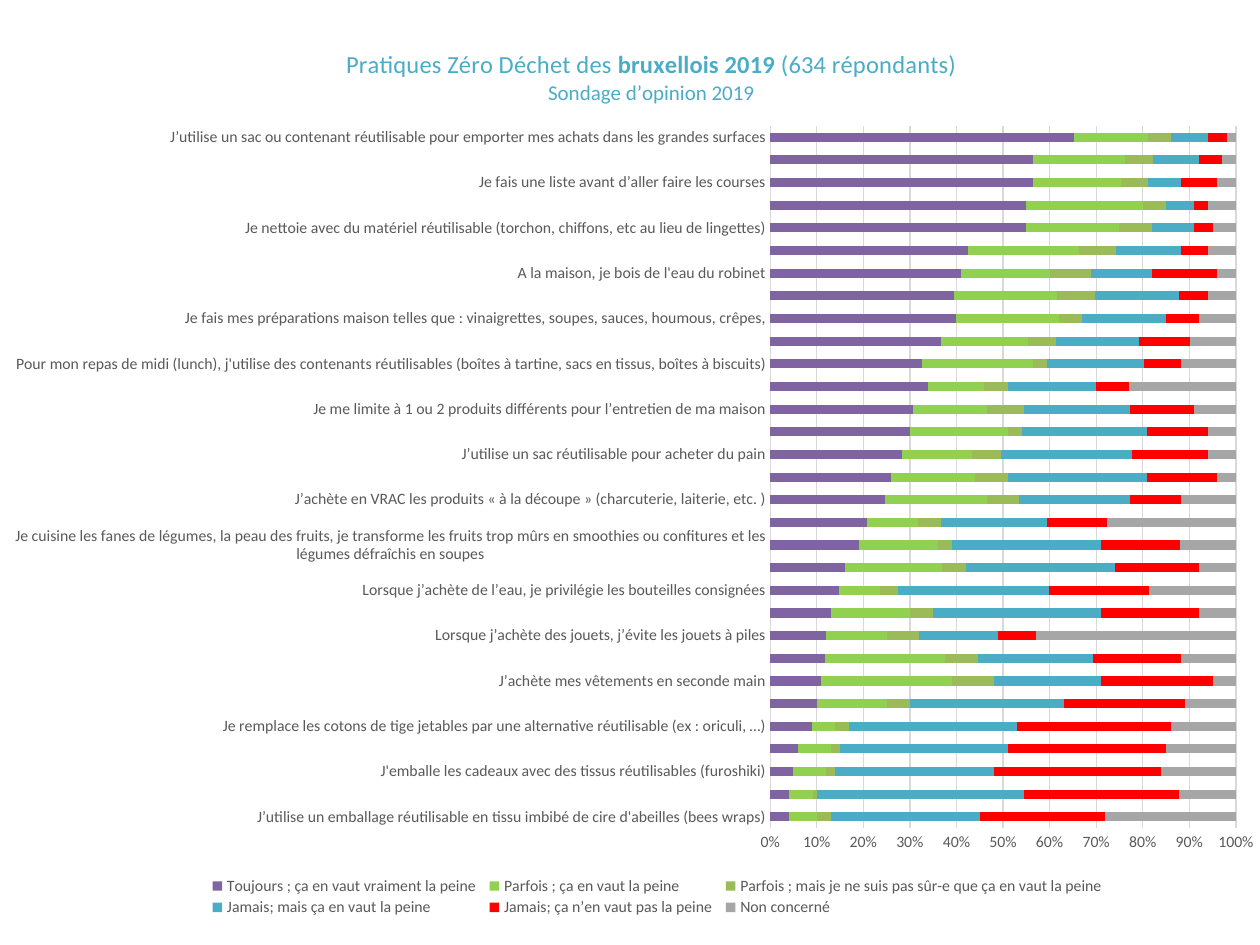
from pptx import Presentation
from pptx.chart.data import CategoryChartData
from pptx.dml.color import RGBColor
from pptx.enum import chart as ch
from pptx.oxml import parse_xml
from pptx.oxml.ns import nsdecls
from pptx.util import Pt

TEAL = RGBColor(0x4B, 0xAC, 0xC6)
PURPLE = RGBColor(0x80, 0x64, 0xA2)
LIME = RGBColor(0x92, 0xD0, 0x50)
OLIVE = RGBColor(0x9B, 0xBB, 0x59)
RED = RGBColor(0xFF, 0x00, 0x00)
SILVER = RGBColor(0xA6, 0xA6, 0xA6)
TEXT = RGBColor(0x59, 0x59, 0x59)
GRID = RGBColor(0xD9, 0xD9, 0xD9)
FONT = "Calibri"

# Content: title lines as (size, runs), runs as (text, bold)
TITLE = [
    (14, [("Pratiques Zéro Déchet des ", False), ("bruxellois 2019", True),
          (" (634 répondants)", False)]),
    (12, [("Sondage d’opinion 2019", False)]),
]

# Habits, from the bottom bar to the top one
HABITS = [
    "J’utilise un emballage réutilisable en tissu imbibé de cire d'abeilles (bees wraps)",
    "Je fabrique certains produits cosmétiques (dentifrice, savon, …)",
    "J'emballe les cadeaux avec des tissus réutilisables (furoshiki)",
    "Je fabrique certains produits d’entretien (maison, lessive, ..)",
    "Je remplace les cotons de tige jetables par une alternative réutilisable (ex : oriculi, …)",
    "J’achète en VRAC les produits liquides (produits d’entretien, etc.)",
    "J’achète mes vêtements en seconde main",
    "Je privilégie les appareils manuels, j’évite les appareils électriques ou "
    "nécessitants des piles",
    "Lorsque j’achète des jouets, j’évite les jouets à piles",
    "Je fais mes préparations maison telles que : biscuits, yaourts, pains, etc.",
    "Lorsque j’achète de l’eau, je privilégie les bouteilles consignées",
    "J’achète en VRAC les produits secs (pâtes, riz, céréales, farine, etc.)",
    "Je cuisine les fanes de légumes, la peau des fruits, je transforme les fruits trop mûrs "
    "en smoothies ou confitures et les légumes défraîchis en soupes",
    "J’évite les dosettes jetables de café en utilisant un percolateur avec un filtre "
    "permanent, dans une cafetière italienne",
    "J’achète en VRAC les produits « à la découpe » (charcuterie, laiterie, etc. )",
    "Je remplace les objets à usages uniques de type essuie-tout, mouchoirs, serviettes en "
    "papier par des objets en tissu",
    "J’utilise un sac réutilisable pour acheter du pain",
    "J’utilise une gourde (bouteilles isothermes, mugs,...) pour mes boissons",
    "Je me limite à 1 ou 2 produits différents pour l’entretien de ma maison",
    "Je me désabonne ou me désinscris des publications que je ne lis plus/pas",
    "Pour mon repas de midi (lunch), j'utilise des contenants réutilisables (boîtes à "
    "tartine, sacs en tissus, boîtes à biscuits)",
    "Pour les fêtes, je remplace les objets en plastique jetables par des alternatives "
    "réutilisables (gobelets, assiettes, couverts)",
    "Je fais mes préparations maison telles que : vinaigrettes, soupes, sauces, houmous, "
    "crêpes,",
    "Je m’organise pour avoir un sac à vrac sur moi en permanence",
    "A la maison, je bois de l'eau du robinet",
    "Je range une fois par semaine le frigo pour éviter d’oublier des aliments",
    "Je nettoie avec du matériel réutilisable (torchon, chiffons, etc au lieu de lingettes)",
    "Je cuisine les repas en tenant compte de ce qui est encore disponible à la maison et "
    "des restes à consommer",
    "Je fais une liste avant d’aller faire les courses",
    "J’utilise un sac ou contenant réutilisable pour emporter mes achats dans les petits "
    "commerces",
    "J’utilise un sac ou contenant réutilisable pour emporter mes achats dans les grandes "
    "surfaces",
]

# Answers: name, colour, share of each habit in percent
ANSWERS = [
    ("Toujours ; ça en vaut vraiment la peine", PURPLE,
     [4, 4, 5, 6, 9, 10, 11, 12, 12, 13, 15, 16, 19, 21, 25, 26, 28, 30, 31, 34, 33, 37,
      40, 39, 41, 43, 55, 55, 57, 57, 66]),
    ("Parfois ; ça en vaut la peine", LIME,
     [6, 5, 7, 7, 5, 15, 28, 26, 13, 17, 9, 21, 17, 11, 22, 18, 15, 21, 16, 12, 24, 19,
      22, 22, 19, 24, 20, 25, 19, 20, 16]),
    ("Parfois ; mais je ne suis pas sûr-e que ça en vaut la peine", OLIVE,
     [3, 1, 2, 2, 3, 5, 9, 7, 7, 5, 4, 5, 3, 5, 7, 7, 6, 3, 8, 5, 3, 6,
      5, 8, 9, 8, 7, 5, 6, 6, 5]),
    ("Jamais; mais ça en vaut la peine", TEAL,
     [32, 44, 34, 36, 36, 33, 23, 25, 17, 36, 33, 32, 32, 23, 24, 30, 28, 27, 23, 19, 21, 18,
      18, 18, 13, 14, 9, 6, 7, 10, 8]),
    ("Jamais; ça n’en vaut pas la peine", RED,
     [27, 33, 36, 34, 33, 26, 24, 19, 8, 21, 22, 18, 17, 13, 11, 15, 16, 13, 14, 7, 8, 11,
      7, 6, 14, 6, 4, 3, 8, 5, 4]),
    ("Non concerné", SILVER,
     [28, 12, 16, 15, 14, 11, 5, 12, 43, 8, 19, 8, 12, 28, 12, 4, 6, 6, 9, 23, 12, 10,
      8, 6, 4, 6, 5, 6, 4, 3, 2]),
]


def style(font, size, color):
    font.name, font.size, font.color.rgb = FONT, Pt(size), color


def layout(x, y, w=None, h=None, inner=False):
    """Place a chart part by fractions of the chart frame."""
    tags = '<c:layoutTarget val="inner"/>' if inner else ""
    tags += '<c:xMode val="edge"/><c:yMode val="edge"/>'
    for tag, val in zip("xywh", (x, y, w, h)):
        if val is not None:
            tags += f'<c:{tag} val="{val}"/>'
    return parse_xml(f'<c:layout {nsdecls("c")}><c:manualLayout>{tags}'
                     '</c:manualLayout></c:layout>')


def place(parent, new, before):
    for old in parent.findall(new.tag):
        parent.remove(old)
    tags = [child.tag.split("}")[1] for child in parent]
    spot = next((i for i, tag in enumerate(tags) if tag in before), len(tags))
    parent.insert(spot, new)


def main():
    prs = Presentation()
    prs.slide_width, prs.slide_height = Pt(720), Pt(540)
    slide = prs.slides.add_slide(prs.slide_layouts[6])

    # Chart
    data = CategoryChartData(number_format="0")
    data.categories = HABITS
    for name, _, vals in ANSWERS:
        data.add_series(name, vals)
    chart = slide.shapes.add_chart(ch.XL_CHART_TYPE.BAR_STACKED_100, Pt(8.6), Pt(9.4),
                                   Pt(719.3), Pt(521.3), data).chart
    style(chart.font, 10, RGBColor(0, 0, 0))
    plot = chart.plots[0]
    plot.gap_width, plot.overlap, plot.vary_by_categories = 150, 100, False
    for ser, (_, color, _) in zip(plot.series, ANSWERS):
        ser.format.fill.solid()
        ser.format.fill.fore_color.rgb = color
    place(chart.plots[0]._element.getparent(),
          layout(0.6, 0.12, 0.37, 0.77, inner=True), ["barChart"])

    # Title
    chart.has_title = True
    frame = chart.chart_title.text_frame
    for i, (size, runs) in enumerate(TITLE):
        para = frame.add_paragraph() if i else frame.paragraphs[0]
        for words, bold in runs:
            run = para.add_run()
            run.text = words
            run.font.bold = bold
            style(run.font, size, TEAL)
    chart.chart_title.include_in_layout = False
    place(chart.chart_title._element, layout(0.26, 0.03), ["overlay", "spPr", "txPr"])

    # Axes
    cat, val = chart.category_axis, chart.value_axis
    for axis in (cat, val):
        axis.major_tick_mark = axis.minor_tick_mark = ch.XL_TICK_MARK.NONE
        style(axis.tick_labels.font, 9, TEXT)
    cat.has_major_gridlines, val.has_major_gridlines = False, True
    for line in (cat.format.line, val.major_gridlines.format.line):
        line.color.rgb, line.width = GRID, Pt(0.75)
    val.format.line.fill.background()
    val.minimum_scale, val.maximum_scale, val.major_unit = 0, 1, 0.1
    val.tick_labels.number_format = "0%"
    val.tick_labels.number_format_is_linked = False
    skip = parse_xml(f'<c:tickLblSkip {nsdecls("c")} val="2"/>')
    place(cat._element, skip, ["tickMarkSkip", "noMultiLvlLbl"])

    # Legend
    chart.has_legend = True
    key = chart.legend
    key.position, key.include_in_layout = ch.XL_LEGEND_POSITION.BOTTOM, False
    style(key.font, 9, TEXT)
    place(key._element, layout(0.15, 0.94, 0.72, 0.05), ["overlay", "spPr", "txPr"])

    prs.save("out.pptx")


if __name__ == "__main__":
    main()
